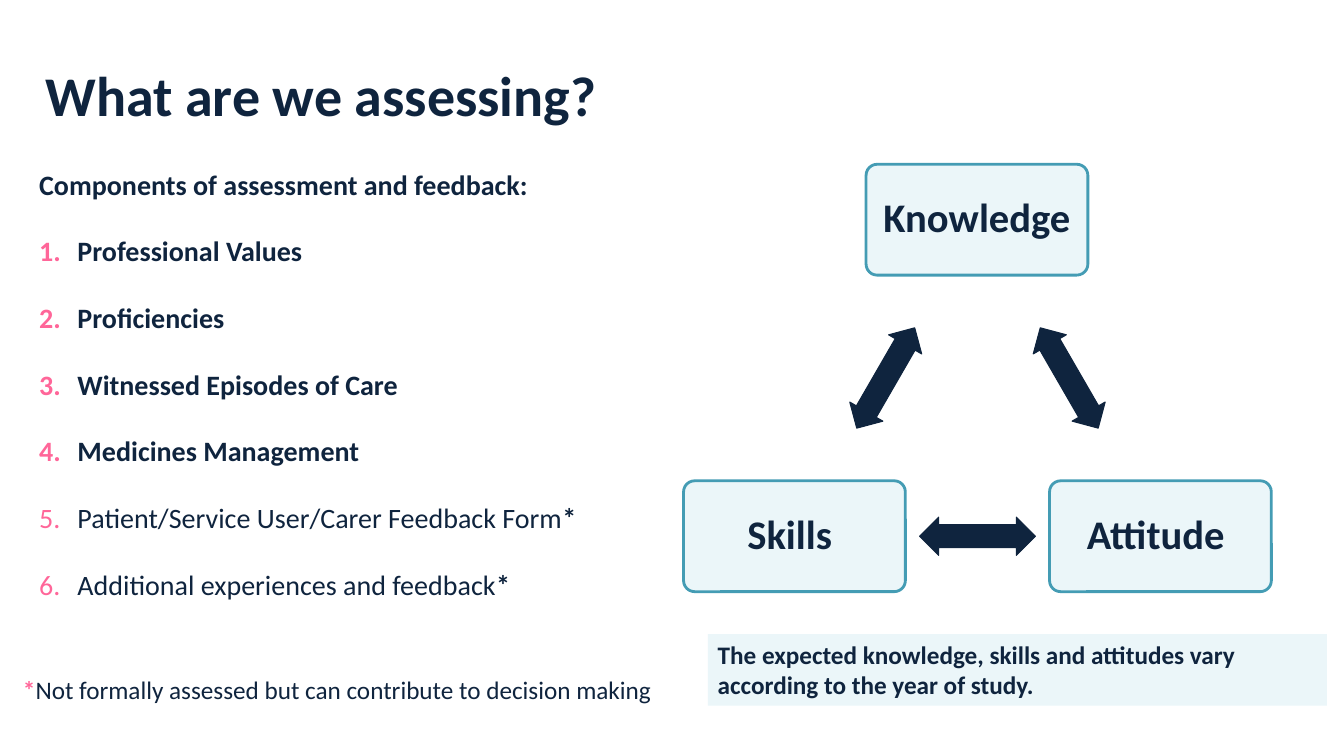
from typing import NamedTuple

from lxml.etree import SubElement
from pptx import Presentation
from pptx.dml.color import RGBColor
from pptx.enum.shapes import MSO_SHAPE as Shape
from pptx.enum.text import MSO_ANCHOR as Anchor, MSO_AUTO_SIZE as Fit, PP_ALIGN as Align
from pptx.oxml.ns import qn
from pptx.util import Inches, Pt

HUES = {"navy": "0F243E", "pink": "FF6699", "pale": "EBF6F9", "teal": "449CB4"}


class Run(NamedTuple):
    text: str
    bold: bool = True
    hue: str = "navy"


class Node(NamedTuple):
    text: str
    left: float
    top: float


class Arrow(NamedTuple):
    left: float
    top: float
    turn: int


STAR = Run("*")
ITEMS = [
    [Run("Professional Values")],
    [Run("Proficiencies")],
    [Run("Witnessed Episodes of Care")],
    [Run("Medicines Management")],
    [Run("Patient/Service User/Carer Feedback Form", False), STAR],
    [Run("Additional experiences and feedback", False), STAR],
]
NODES = [Node("Knowledge ", 8.59, 1.63), Node("Attitude ", 10.41, 4.77), Node("Skills ", 6.78, 4.77)]
ARROWS = [Arrow(10.03, 3.56, 60), Arrow(9.12, 5.13, 180), Arrow(8.21, 3.56, 300)]


def tint(name: str) -> RGBColor:
    return RGBColor.from_string(HUES[name])


def number(para) -> None:
    props = para._p.get_or_add_pPr()
    props.set("marL", str(Inches(0.38)))
    props.set("indent", str(-Inches(0.38)))
    hue = SubElement(props, qn("a:buClr"))
    SubElement(hue, qn("a:srgbClr"), val=HUES["pink"])
    SubElement(props, qn("a:buFont"), typeface="+mj-lt")
    SubElement(props, qn("a:buAutoNum"), type="arabicPeriod")


def write(para, *runs: Run, size: float, align=Align.LEFT, before: float = 0, lines: float = 1) -> None:
    para.alignment = align
    para.space_before = Pt(before)
    para.line_spacing = lines
    for part in runs:
        run = para.add_run()
        run.text = part.text
        font = run.font
        font.name, font.size, font.bold = "Calibri", Pt(size), part.bold
        font.color.rgb = tint(part.hue)


def frame(shape, inset: float | None = None, anchor=Anchor.TOP):
    body = shape.text_frame
    body.word_wrap = True
    body.auto_size = Fit.NONE
    body.vertical_anchor = anchor
    if inset is not None:
        body.margin_left = body.margin_right = Inches(inset)
        body.margin_top = body.margin_bottom = Inches(inset)
    return body


def block(slide, kind, left: float, top: float, wide: float, high: float, fill: str,
          line: str | None = None, width: float = 0.75):
    shape = slide.shapes.add_shape(kind, Inches(left), Inches(top), Inches(wide), Inches(high))
    shape.shadow.inherit = False
    shape.fill.solid()
    shape.fill.fore_color.rgb = tint(fill)
    if line:
        shape.line.color.rgb = tint(line)
        shape.line.width = Pt(width)
    else:
        shape.line.fill.background()
    return shape


def textbox(slide, left: float, top: float, wide: float, high: float):
    return frame(slide.shapes.add_textbox(Inches(left), Inches(top), Inches(wide), Inches(high)))


def draw_node(slide, node: Node) -> None:
    shape = block(slide, Shape.ROUNDED_RECTANGLE, node.left, node.top, 2.2, 1.1, "pale", "teal", 2)
    shape.adjustments[0] = 0.1
    body = frame(shape, 0.12, Anchor.MIDDLE)
    write(body.paragraphs[0], Run(node.text), size=29, align=Align.CENTER, lines=0.9)


def draw_arrow(slide, arrow: Arrow) -> None:
    shape = block(slide, Shape.LEFT_RIGHT_ARROW, arrow.left, arrow.top, 1.15, 0.38, "navy", "navy")
    shape.adjustments[0] = 0.6
    shape.adjustments[1] = 0.5
    shape.rotation = arrow.turn


def main() -> None:
    deck = Presentation()
    deck.slide_width, deck.slide_height = Inches(13.33), Inches(7.5)
    slide = deck.slides.add_slide(deck.slide_layouts[5])

    title = slide.shapes.title
    title.left, title.top = Inches(0.45), Inches(0.6)
    title.width, title.height = Inches(10.87), Inches(1.11)
    write(frame(title, 0).paragraphs[0], Run("What are we assessing?"), size=40)

    parts = textbox(slide, 0.29, 1.61, 6.1, 4.48)
    write(parts.paragraphs[0], Run("Components of assessment and feedback:"), size=20)
    for item in ITEMS:
        para = parts.add_paragraph()
        number(para)
        write(para, *item, size=20, before=23.6)

    for node in NODES:
        draw_node(slide, node)
    for arrow in ARROWS:
        draw_arrow(slide, arrow)

    note = textbox(slide, 0.13, 6.64, 7.06, 0.4)
    write(note.paragraphs[0], Run("*", hue="pink"),
          Run("Not formally assessed but can contribute to decision making", False), size=18)

    panel = block(slide, Shape.RECTANGLE, 7.02, 6.29, 6.14, 0.71, "pale")
    write(frame(panel).paragraphs[0],
          Run("The expected knowledge, skills and attitudes vary according to the year of study."), size=18)

    deck.save("out.pptx")


if __name__ == "__main__":
    main()
